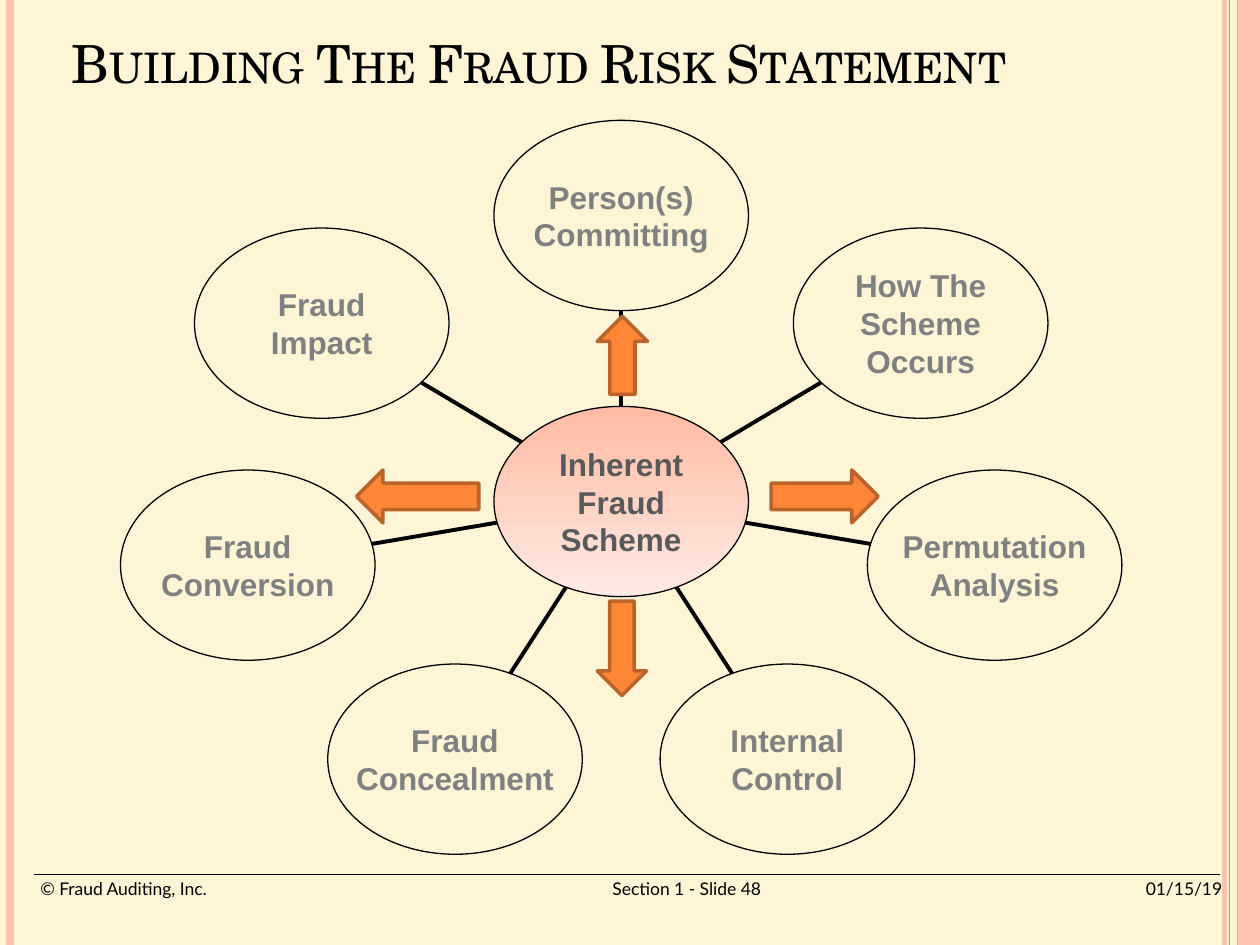
"""Build the fraud risk statement slide: a hub with seven radial satellites."""
import math

import lxml.etree
import pptx
import pptx.dml.color
import pptx.enum.shapes
import pptx.enum.text
import pptx.oxml.ns
import pptx.util

Inches = pptx.util.Inches
Pt = pptx.util.Pt
RGBColor = pptx.dml.color.RGBColor
MSO_SHAPE = pptx.enum.shapes.MSO_SHAPE
MSO_ANCHOR = pptx.enum.text.MSO_ANCHOR
PP_ALIGN = pptx.enum.text.PP_ALIGN
qn = pptx.oxml.ns.qn

CREAM = RGBColor(0xFD, 0xF5, 0xD5)
BLACK = RGBColor(0, 0, 0)
PEACH = RGBColor(0xFE, 0xC3, 0xAE)
ORANGE = RGBColor(0xFE, 0x86, 0x37)
RUST = RGBColor(0xBC, 0x63, 0x29)
GREY = RGBColor(0x80, 0x80, 0x80)
DARK_GREY = RGBColor(0x59, 0x59, 0x59)
HUB_TOP = RGBColor(0xFF, 0xBB, 0xA3)
HUB_BOTTOM = RGBColor(0xFF, 0xEA, 0xE4)

CENTER_X, CENTER_Y = 4.93, 3.98
ORBIT_X, ORBIT_Y = 3.04, 2.27
OVAL_WIDTH, OVAL_HEIGHT = 2.02, 1.51

presentation = pptx.Presentation()
presentation.slide_width = Inches(10)
presentation.slide_height = Inches(7.5)
slide = presentation.slides.add_slide(presentation.slide_layouts[6])
slide.background.fill.solid()
slide.background.fill.fore_color.rgb = CREAM


def add_line(x1, y1, x2, y2, color, width):
    line = slide.shapes.add_connector(
        pptx.enum.shapes.MSO_CONNECTOR.STRAIGHT,
        Inches(x1), Inches(y1), Inches(x2), Inches(y2))
    line.line.color.rgb = color
    line.line.width = Pt(width)
    lxml.etree.SubElement(line._element.spPr, qn("a:effectLst"))


def add_oval(x, y, lines, color):
    oval = slide.shapes.add_shape(
        MSO_SHAPE.OVAL,
        Inches(x - OVAL_WIDTH / 2), Inches(y - OVAL_HEIGHT / 2),
        Inches(OVAL_WIDTH), Inches(OVAL_HEIGHT))
    oval.shadow.inherit = False
    oval.fill.background()
    oval.line.color.rgb = BLACK
    oval.line.width = Pt(0.75)
    frame = oval.text_frame
    frame_format = {"margin_left": 0, "margin_right": 0, "margin_top": 0,
                    "margin_bottom": 0, "word_wrap": False,
                    "vertical_anchor": MSO_ANCHOR.MIDDLE}
    for name, value in frame_format.items():
        setattr(frame, name, value)
    frame.text = "\n".join(lines)
    for paragraph in frame.paragraphs:
        paragraph.alignment = PP_ALIGN.CENTER
        for name, value in {"name": "Arial", "size": Pt(18), "bold": True}.items():
            setattr(paragraph.font, name, value)
        paragraph.font.color.rgb = color
    return oval


add_line(0.27, 6.94, 9.68, 6.94, BLACK, 1)
for x, color, width in [(9.72, PEACH, 3), (9.83, ORANGE, 1.5),
                        (9.76, ORANGE, 0.75), (0.08, PEACH, 4.5)]:
    add_line(x, 0, x, 7.5, color, width)
band = slide.shapes.add_shape(
    MSO_SHAPE.RECTANGLE, Inches(9.82), 0, Inches(0.18), Inches(7.5))
band.shadow.inherit = False
band.fill.solid()
band.fill.fore_color.rgb = PEACH
band.line.fill.background()

title = slide.shapes.add_textbox(Inches(0.47), Inches(0.13), Inches(9.18), Inches(0.74))
title.text_frame.word_wrap = True
title.text_frame.vertical_anchor = MSO_ANCHOR.MIDDLE
run = title.text_frame.paragraphs[0].add_run()
run.text = "Building The Fraud Risk Statement"
for name, value in {"name": "TeX Gyre Schola", "size": Pt(30)}.items():
    setattr(run.font, name, value)
run.font.color.rgb = BLACK
run._r.get_or_add_rPr().set("cap", "small")

footer = slide.shapes.add_textbox(Inches(0.3), Inches(6.97), Inches(9.45), Inches(0.34))
footer_format = {"margin_left": Inches(0.02), "margin_right": Inches(0.02),
                 "margin_top": 0, "margin_bottom": 0, "word_wrap": True}
for name, value in footer_format.items():
    setattr(footer.text_frame, name, value)
paragraph = footer.text_frame.paragraphs[0]
tabs = lxml.etree.SubElement(paragraph._p.get_or_add_pPr(), qn("a:tabLst"))
for position, alignment in [(5.13, "ctr"), (9.38, "r")]:
    lxml.etree.SubElement(tabs, qn("a:tab"), pos=str(Inches(position)), algn=alignment)
run = paragraph.add_run()
run.text = "© Fraud Auditing, Inc.\tSection 1 - Slide 48\t01/15/19"
for name, value in {"name": "Lato", "size": Pt(10)}.items():
    setattr(run.font, name, value)
run.font.color.rgb = BLACK

satellites = [
    ["Person(s)", "Committing"],
    ["How The", "Scheme", "Occurs"],
    ["Permutation", "Analysis"],
    ["Internal", "Control"],
    ["Fraud", "Concealment"],
    ["Fraud", "Conversion"],
    ["Fraud", "Impact"],
]
for index, lines in enumerate(satellites):
    angle = 2 * math.pi * index / len(satellites)
    across, down = math.sin(angle), -math.cos(angle)
    x, y = CENTER_X + ORBIT_X * across, CENTER_Y + ORBIT_Y * down
    edge_x, edge_y = OVAL_WIDTH / 2 * across, OVAL_HEIGHT / 2 * down
    add_line(CENTER_X + edge_x, CENTER_Y + edge_y, x - edge_x, y - edge_y, BLACK, 2.25)
    add_oval(x, y, lines, GREY)

hub = add_oval(CENTER_X, CENTER_Y, ["Inherent", "Fraud", "Scheme"], DARK_GREY)
hub.fill.gradient()
hub.fill.gradient_angle = 270
for stop, color, position in zip(hub.fill.gradient_stops, (HUB_TOP, HUB_BOTTOM), (0, 1)):
    stop.color.rgb = color
    stop.position = position

arrows = [
    (MSO_SHAPE.LEFT_ARROW, 2.83, 3.73, 0.97, 0.42),
    (MSO_SHAPE.RIGHT_ARROW, 6.12, 3.73, 0.85, 0.42),
    (MSO_SHAPE.UP_ARROW, 4.74, 2.51, 0.4, 0.62),
    (MSO_SHAPE.DOWN_ARROW, 4.74, 4.77, 0.39, 0.75),
]
for kind, *box in arrows:
    arrow = slide.shapes.add_shape(kind, *map(Inches, box))
    arrow.shadow.inherit = False
    arrow.fill.solid()
    arrow.fill.fore_color.rgb = ORANGE
    arrow.line.color.rgb = RUST
    arrow.line.width = Pt(2)

presentation.save("out.pptx")
